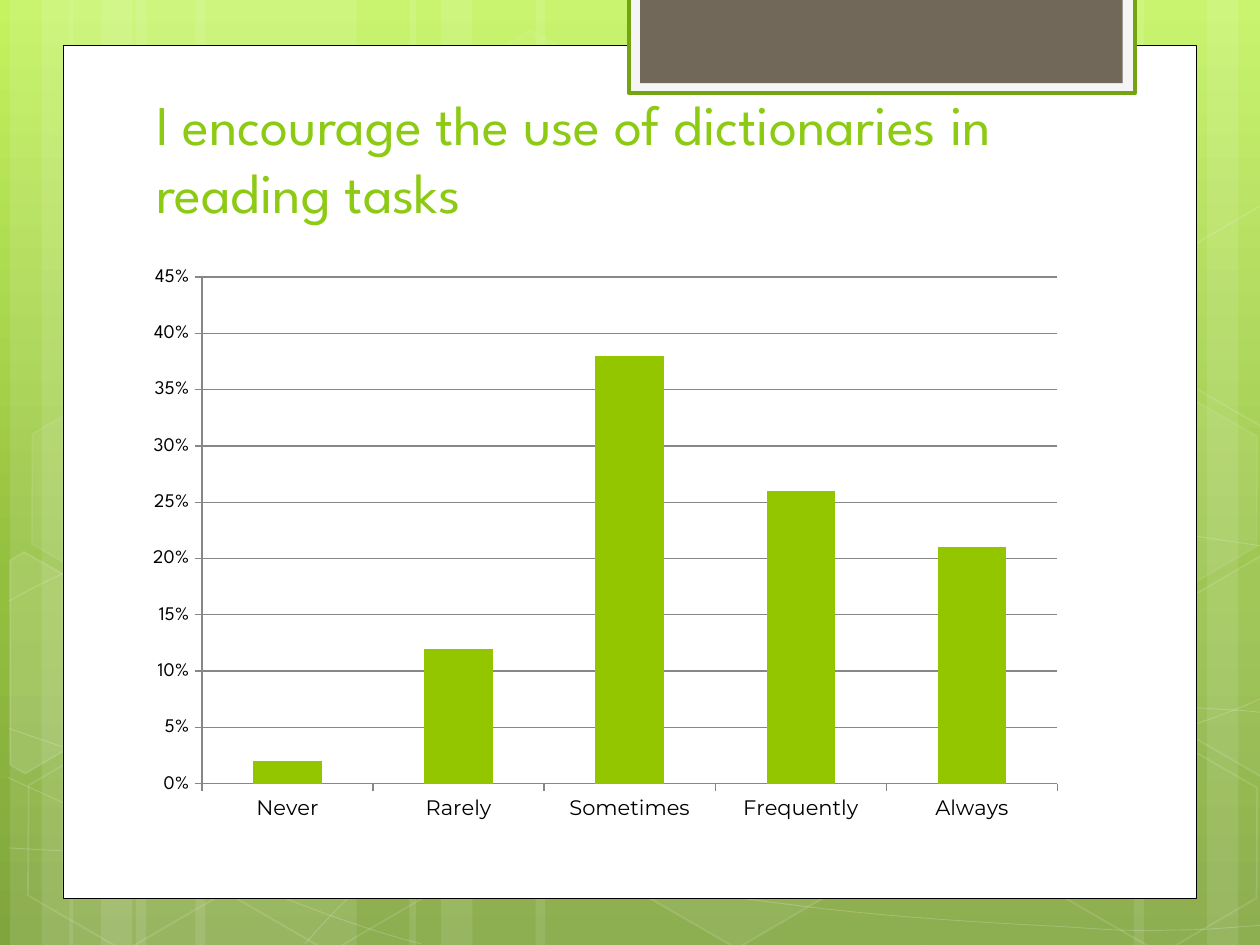
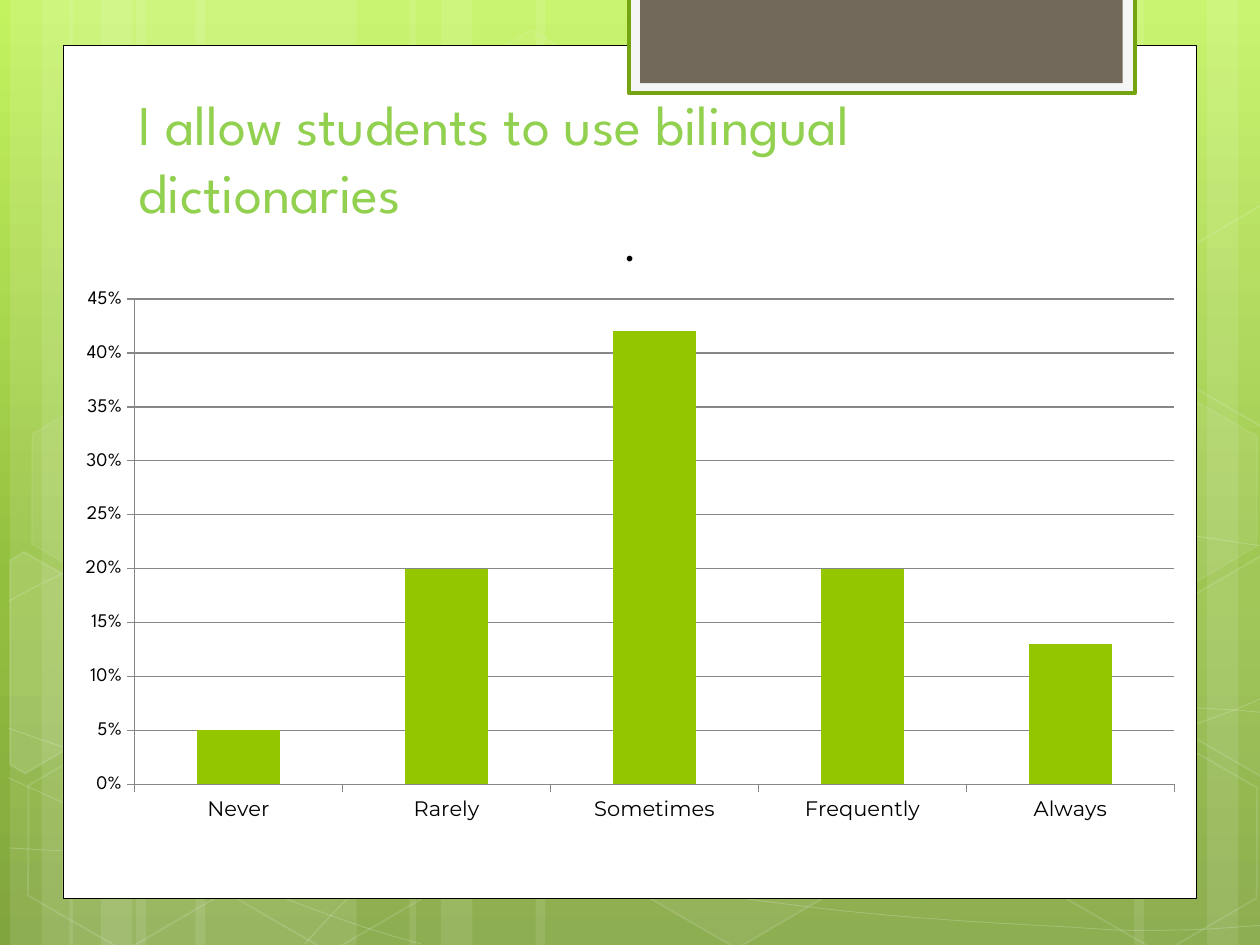
from copy import deepcopy
from dataclasses import dataclass

from lxml.etree import SubElement
from pptx import Presentation
from pptx.chart.data import CategoryChartData
from pptx.dml.color import RGBColor as RGB
from pptx.enum.chart import XL_CHART_TYPE as ChartType, XL_TICK_MARK as Tick
from pptx.enum.shapes import MSO_SHAPE as Preset
from pptx.enum.text import MSO_ANCHOR as Anchor
from pptx.oxml.ns import qn
from pptx.util import Pt

PX = 9144  # EMU per px, 100 px to the inch
WIDTH, HEIGHT = 1000, 750


@dataclass(frozen=True)
class Theme:
    white: str = "FFFFFF"
    black: str = "000000"
    tab_rim: str = "F5F5F5"
    tab_line: str = "74A510"
    tab_core: str = "71685A"
    bar: str = "94C600"
    grid: str = "878787"
    backdrop: tuple = ((0, "C3F35F"), (0.62, "93BF3F"), (1, "81A53E"))
    heading_font: str = "League Spartan"
    label_font: str = "Montserrat"
    title_size: int = 32
    chart_title_size: int = 18
    category_size: int = 12
    value_size: int = 11
    chart_size: int = 10


# left, width
BANDS = [(108, 175), (8, 50), (33, 83), (155, 175), (55, 50), (80, 83),
         (733, 175), (958, 50), (900, 83), (425, 308), (325, 50), (350, 83)]

# a start point, then two handles and an end point for each cubic segment
WAVES = [
    [(7, 673), (61, 676), (115, 679), (190, 678), (265, 677), (358, 675), (458, 665),
     (558, 655), (700, 636), (792, 617), (883, 598), (977, 568), (1007, 551)],
    [(7, 477), (36, 461), (65, 446), (121, 431), (178, 416), (259, 394), (347, 387),
     (436, 380), (544, 379), (654, 387), (764, 395), (947, 426), (1007, 434)],
    [(6, 617), (127, 672), (247, 727), (334, 749)],
    [(7, 578), (38, 589), (70, 600), (128, 616), (186, 631), (273, 656), (357, 673),
     (440, 690), (545, 708), (628, 718), (711, 729), (800, 733), (853, 736),
     (905, 740), (919, 738), (945, 738), (971, 737), (989, 735), (1007, 734)],
    [(242, 749), (260, 729), (278, 709), (302, 691), (326, 673), (360, 653), (388, 639),
     (416, 625), (433, 619), (470, 609), (506, 599), (573, 585), (608, 578),
     (644, 571), (649, 571), (680, 569), (711, 566), (760, 563), (794, 562),
     (829, 561), (886, 562), (886, 562), (886, 562), (953, 562), (953, 562),
     (971, 563), (988, 564), (997, 565), (1006, 566), (1003, 565), (1006, 566)],
]

# left, top, fill opacity, line opacity (percent)
HEXAGONS = [(334, 36, 4, 8), (497, 589, 6, 12), (11, 591, 0, 12), (14, 312, 7, 8),
            (174, 592, 0, 12), (753, 453, 10, 12), (834, 593, 0, 12), (834, 314, 7, 8)]

# outline, fill opacity
CUT_HEXAGONS = [
    ([(8, 445), (19, 438), (96, 482), (95, 570), (20, 614), (8, 607)], 10),
    ([(926, 485), (1001, 441), (1009, 446), (1009, 613), (1002, 617), (926, 573)], 4),
    ([(926, 207), (1001, 163), (1010, 168), (1009, 335), (1002, 339), (926, 295)], 0),
]

FREQUENCIES = ["Never", "Rarely", "Sometimes", "Frequently", "Always"]

QUESTIONS = [
    dict(title="I encourage the use of dictionaries in reading tasks",
         title_box=(114, 75, 768, 108), title_color="8DCA14",
         chart_box=(108, 209, 747, 458), shares=[0.02, 0.12, 0.38, 0.26, 0.21],
         plot=dict(x=0.07, y=0.024, w=0.909, h=0.878)),
    dict(title="I allow students to use bilingual dictionaries",
         title_box=(100, 58, 768, 125), title_color="92D050",
         chart_box=(50, 167, 900, 495), shares=[0.05, 0.2, 0.42, 0.2, 0.13],
         chart_title="."),
]


def emu(lengths):
    return [length * PX for length in lengths]


def assign(target, values):
    for name, value in values.items():
        setattr(target, name, value)


def bend(shape):
    """Turn each three line points of an outline into one cubic curve."""
    outline = shape._element.find(".//" + qn("a:path"))
    lines = outline.findall(qn("a:lnTo"))
    for i in range(0, len(lines), 3):
        curve = SubElement(outline, qn("a:cubicBezTo"))
        for line in lines[i:i + 3]:
            curve.append(line[0])
            outline.remove(line)


class Deck:
    def __init__(self, theme):
        self.theme = theme
        self.prs = Presentation()
        assign(self.prs, dict(slide_width=WIDTH * PX, slide_height=HEIGHT * PX))
        self.slide = None

    def new_slide(self):
        self.slide = self.prs.slides.add_slide(self.prs.slide_layouts[6])
        fill = self.slide.background.fill
        fill.gradient()
        fill.gradient_angle = 270
        stops = self.slide._element.find(".//" + qn("a:gsLst"))
        stops.append(deepcopy(stops[0]))
        for stop, (position, color) in zip(fill.gradient_stops, self.theme.backdrop):
            stop.position = position
            stop.color.rgb = RGB.from_string(color)

    def paint(self, fill, color, opacity=100):
        if not color or not opacity:
            fill.background()
            return
        fill.solid()
        fill.fore_color.rgb = RGB.from_string(color)
        if opacity < 100:
            solid = fill._xPr.find(qn("a:solidFill"))
            SubElement(solid[0], qn("a:alpha"), val=str(opacity * 1000))

    def dress(self, shape, fill=None, opacity=100, line=None, width=1, line_opacity=100):
        shape.shadow.inherit = False
        self.paint(shape.fill, fill, opacity)
        self.paint(shape.line.fill, line, line_opacity)
        if line:
            shape.line.width = Pt(width)

    def shape(self, box, preset=Preset.RECTANGLE, rotation=0, **style):
        shape = self.slide.shapes.add_shape(preset, *emu(box))
        shape.rotation = rotation
        self.dress(shape, **style)
        return shape

    def outline(self, points, close=False, **style):
        start, *rest = [emu(point) for point in points]
        builder = self.slide.shapes.build_freeform(*start)
        builder.add_line_segments(rest, close=close)
        shape = builder.convert_to_shape()
        self.dress(shape, **style)
        return shape

    def font(self, font, size, color, name=None, bold=False):
        assign(font, dict(size=Pt(size), bold=bold, name=name or self.theme.heading_font))
        font.color.rgb = RGB.from_string(color)

    def frame(self):
        """Backdrop pattern, white card and the tab hanging from the top."""
        white = self.theme.white
        for left, width in BANDS:
            self.shape((left, 0, width, HEIGHT), fill=white, opacity=10)
        for wave in WAVES:
            bend(self.outline(wave, line=white, width=0.5, line_opacity=20))
        for left, top, opacity, line_opacity in HEXAGONS:
            hexagon = self.shape((left, top, 175, 152), Preset.HEXAGON, 30, fill=white,
                                 opacity=opacity, line=white, line_opacity=line_opacity)
            hexagon.adjustments[0] = 0.285
        for points, opacity in CUT_HEXAGONS:
            self.outline(points, close=True, fill=white, opacity=opacity,
                         line=white, line_opacity=12)
        self.shape((50, 36, 900, 677), fill=white, line=self.theme.black, width=0.5)
        self.shape((499, -2, 402, 76), fill=self.theme.tab_rim,
                   line=self.theme.tab_line, width=2)
        self.shape((508, -2, 383, 68), fill=self.theme.tab_core)

    def title(self, text, box, color):
        frame = self.slide.shapes.add_textbox(*emu(box)).text_frame
        assign(frame, dict(word_wrap=True, vertical_anchor=Anchor.BOTTOM))
        run = frame.paragraphs[0].add_run()
        run.text = text
        self.font(run.font, self.theme.title_size, color)

    def axis(self, axis, size, font_name, **values):
        assign(axis, dict(major_tick_mark=Tick.OUTSIDE, minor_tick_mark=Tick.NONE, **values))
        self.font(axis.tick_labels.font, size, self.theme.black, font_name)
        self.paint(axis.format.line.fill, self.theme.grid)

    def column_chart(self, box, shares, title=None, plot=None):
        theme = self.theme
        data = CategoryChartData(number_format="0%")
        data.categories = FREQUENCIES
        data.add_series("Series 1", shares)
        chart = self.slide.shapes.add_chart(ChartType.COLUMN_CLUSTERED, *emu(box), data).chart
        assign(chart, dict(has_legend=False, has_title=bool(title)))
        self.font(chart.font, theme.chart_size, theme.black)
        if title:
            heading = chart.chart_title.text_frame
            heading.text = title
            self.font(heading.paragraphs[0].runs[0].font, theme.chart_title_size,
                      theme.black, bold=True)
        self.axis(chart.category_axis, theme.category_size, theme.label_font)
        self.axis(chart.value_axis, theme.value_size, theme.heading_font,
                  minimum_scale=0, maximum_scale=0.45, major_unit=0.05,
                  has_major_gridlines=True)
        assign(chart.value_axis.tick_labels,
               dict(number_format="0%", number_format_is_linked=False))
        self.paint(chart.value_axis.major_gridlines.format.line.fill, theme.grid)
        columns = chart.plots[0]
        assign(columns, dict(gap_width=150, vary_by_categories=False))
        self.paint(columns.series[0].format.fill, theme.bar)
        if plot:
            self.place_plot(chart, plot)

    def place_plot(self, chart, plot):
        """Fix the inner plot area at fractions of the chart."""
        area = chart._chartSpace.find(".//" + qn("c:plotArea"))
        layout = area.find(qn("c:layout"))
        if layout is None:
            layout = SubElement(area, qn("c:layout"))
            area.insert(0, layout)
        manual = SubElement(layout, qn("c:manualLayout"))
        settings = dict(layoutTarget="inner", xMode="edge", yMode="edge", **plot)
        for tag, value in settings.items():
            SubElement(manual, qn("c:" + tag), val=str(value))


def main():
    deck = Deck(Theme())
    for question in QUESTIONS:
        deck.new_slide()
        deck.frame()
        deck.title(question["title"], question["title_box"], question["title_color"])
        deck.column_chart(question["chart_box"], question["shares"],
                          question.get("chart_title"), question.get("plot"))
    deck.prs.save("out.pptx")


if __name__ == "__main__":
    main()
